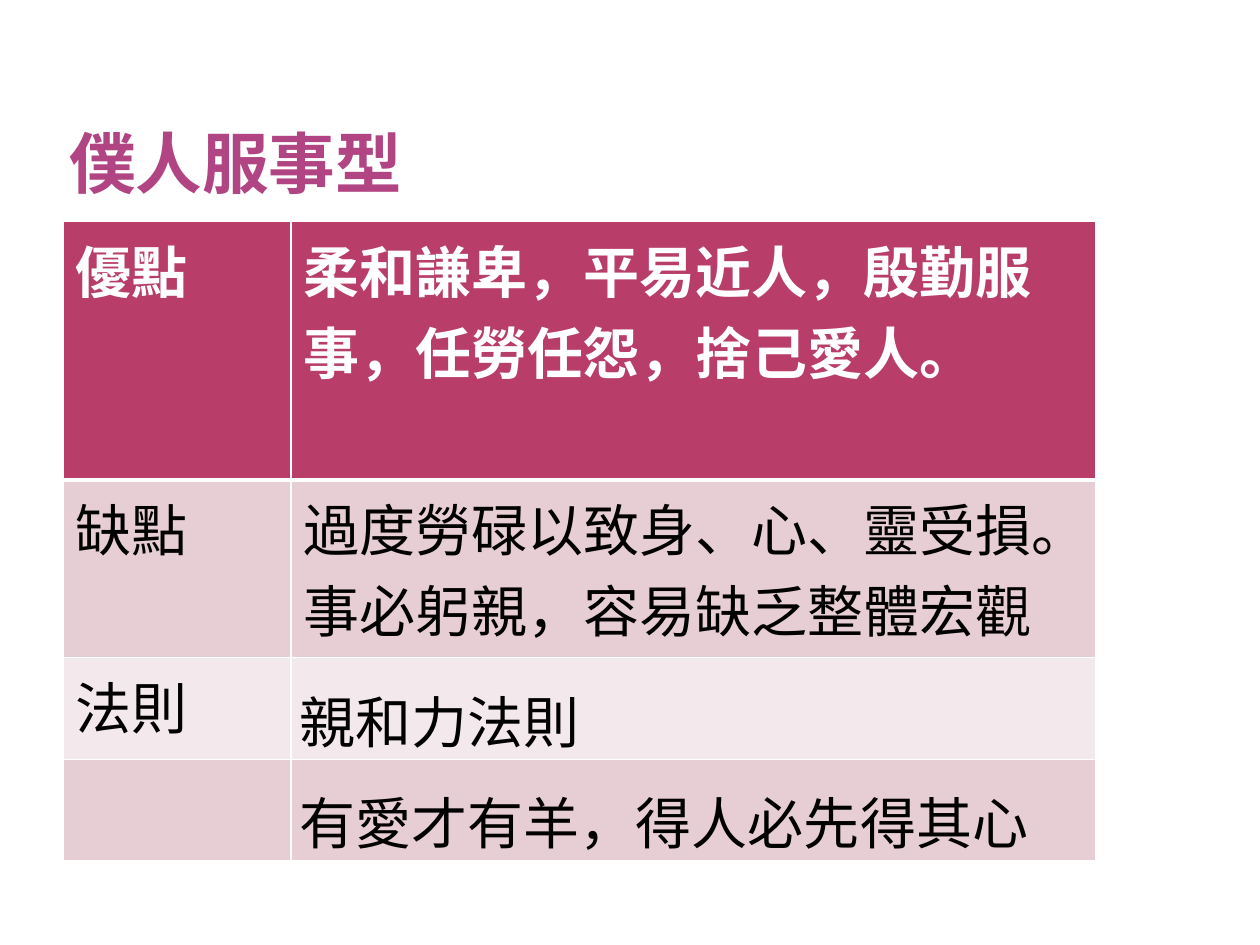
from dataclasses import dataclass

from lxml import etree
from pptx import Presentation
from pptx import util as u
from pptx.dml.color import RGBColor
from pptx.enum import text
from pptx.oxml import ns

PX = 9144  # 100 px to the inch
COLORS = {
    "title": "B14583",
    "title_edge": "5E1A50",
    "header": "B83D68",
    "band_dark": "E6CED4",
    "band_light": "F3E8EB",
    "white": "FFFFFF",
    "black": "000000",
}
COLUMN_WIDTHS = (181, 639)


@dataclass(frozen=True)
class Trait:
    label: str
    description: str
    height: int
    fill: str
    ink: str = "black"
    bold: bool = False
    bottom_line: int = 1
    principle: bool = False


TRAITS = (
    Trait("優點", "柔和謙卑，平易近人，殷勤服事，任勞任怨，捨己愛人。", 205,
          "header", ink="white", bold=True, bottom_line=3),
    Trait("缺點", "過度勞碌以致身、心、靈受損。事必躬親，容易缺乏整體宏觀", 141, "band_dark"),
    Trait("法則", "親和力法則", 76, "band_light", principle=True),
    Trait("", "有愛才有羊，得人必先得其心", 76, "band_dark", principle=True),
)


def px(length: int) -> u.Emu:
    return u.Emu(length * PX)


def rgb(name: str) -> RGBColor:
    return RGBColor.from_string(COLORS[name])


def format_runs(paragraph, size: int, ink: str, bold: bool, face: str = "Roboto") -> None:
    for run in paragraph.runs:
        run.font.name = face
        run.font.size = u.Pt(size)
        run.font.bold = bold
        run.font.color.rgb = rgb(ink)


def line_xml(tag: str, width: int, color: str):
    line = etree.Element(ns.qn(tag), w=str(width))
    fill = etree.SubElement(line, ns.qn("a:solidFill"))
    etree.SubElement(fill, ns.qn("a:srgbClr"), val=COLORS[color])
    return line


def set_borders(cell, top: int, bottom: int) -> None:
    """Put white lines, with widths in points, before the cell's fill."""
    properties = cell._tc.get_or_add_tcPr()
    widths = {"a:lnL": 1, "a:lnR": 1, "a:lnT": top, "a:lnB": bottom}
    for place, (tag, width) in enumerate(widths.items()):
        properties.insert(place, line_xml(tag, u.Pt(width), "white"))


def add_title(slide, wording: str) -> None:
    title = slide.shapes.title
    title.left, title.top, title.width, title.height = map(px, (50, 35, 792, 125))
    frame = title.text_frame
    frame.text = wording
    frame.word_wrap = True
    frame.auto_size = text.MSO_AUTO_SIZE.NONE
    frame.vertical_anchor = text.MSO_ANCHOR.BOTTOM
    frame.margin_left = frame.margin_right = px(5)
    frame.margin_top = frame.margin_bottom = 0
    heading = frame.paragraphs[0]
    heading.alignment = text.PP_ALIGN.LEFT
    format_runs(heading, 38, "title", True)
    edge = line_xml("a:ln", u.Pt(0.04), "title_edge")
    heading.runs[0].font._element.insert(0, edge)


def fill_cell(cell, wording: str, trait: Trait, top_line: int) -> None:
    cell.fill.solid()
    cell.fill.fore_color.rgb = rgb(trait.fill)
    set_borders(cell, top_line, trait.bottom_line)
    cell.text_frame.text = wording
    format_runs(cell.text_frame.paragraphs[0], 32, trait.ink, trait.bold)


def format_principle(cell, trait: Trait) -> None:
    cell.margin_left = cell.margin_right = px(7)
    cell.margin_top = cell.margin_bottom = 0
    paragraph = cell.text_frame.paragraphs[0]
    paragraph.line_spacing = 1.25
    format_runs(paragraph, 32, trait.ink, trait.bold, "Times New Roman")


def add_traits(slide, traits: tuple[Trait, ...]) -> None:
    height = sum(trait.height for trait in traits)
    table = slide.shapes.add_table(
        len(traits), len(COLUMN_WIDTHS),
        px(50), px(176), px(sum(COLUMN_WIDTHS)), px(height)).table
    for column, width in zip(table.columns, COLUMN_WIDTHS):
        column.width = px(width)
    top_line = 1
    for row, trait in zip(table.rows, traits):
        row.height = px(trait.height)
        for cell, wording in zip(row.cells, (trait.label, trait.description)):
            fill_cell(cell, wording, trait, top_line)
        if trait.principle:
            format_principle(row.cells[1], trait)
        top_line = trait.bottom_line


def main() -> None:
    deck = Presentation()
    deck.slide_width, deck.slide_height = px(1000), px(750)
    slide = deck.slides.add_slide(deck.slide_layouts[5])
    slide.background.fill.solid()
    slide.background.fill.fore_color.rgb = rgb("white")
    add_title(slide, "僕人服事型")
    add_traits(slide, TRAITS)
    deck.save("out.pptx")


if __name__ == "__main__":
    main()
